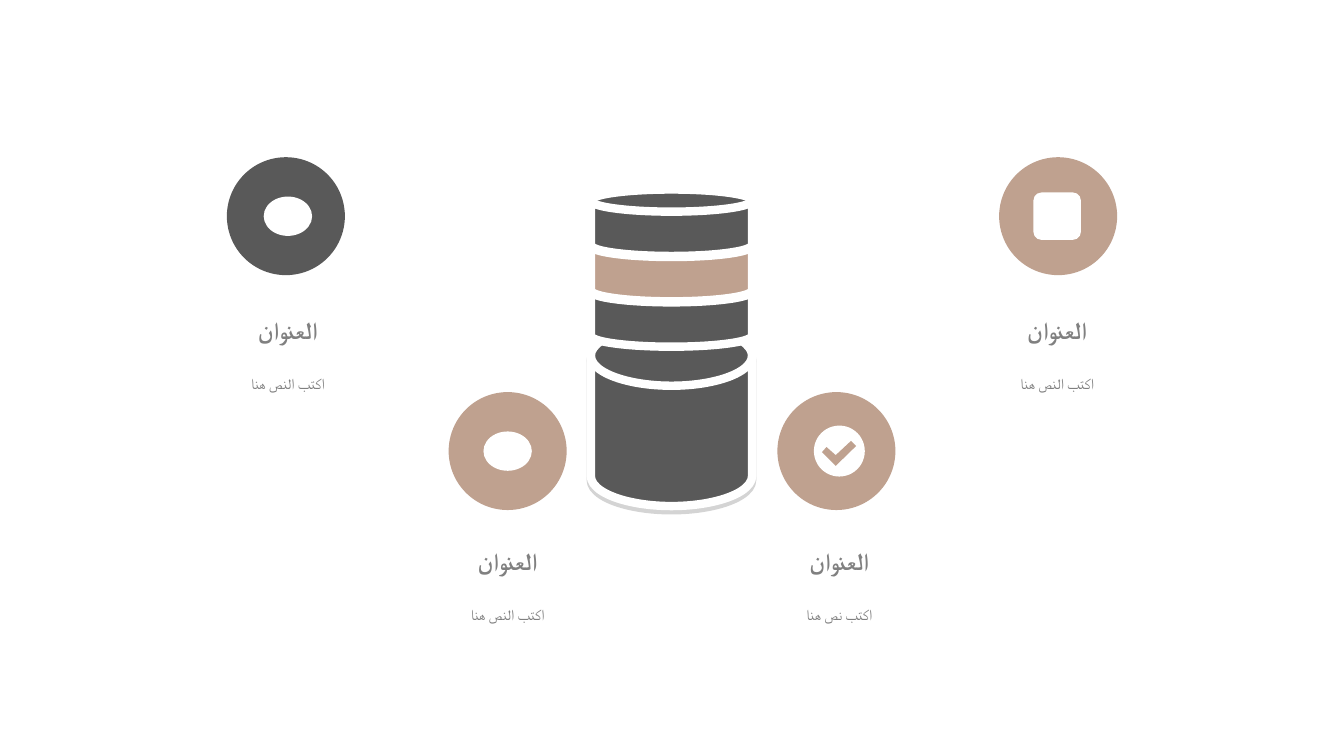
import pptx
import pptx.util
import pptx.dml.color
import pptx.enum.shapes
import pptx.enum.text
import lxml.etree

SHAPES = pptx.enum.shapes.MSO_SHAPE
ANCHOR = pptx.enum.text.MSO_ANCHOR
DML = "http://schemas.openxmlformats.org/drawingml/2006/main"
FONT = "Noto Sans CJK SC"
COLORS = {"dark": "595959", "tan": "BFA18F", "text": "808080",
          "white": "FFFFFF", "shadow": "000000"}

# The slide is a grid of 100 columns by 100 rows.
WIDTH, HEIGHT = pptx.util.Inches(13.33), pptx.util.Inches(7.5)
COL, ROW = WIDTH / 100, HEIGHT / 100
DISC = (8.78, 15.6)
LABEL_WIDTH = 20.18
TITLE_ROWS, BODY_ROWS, BODY_DROP = 3.6, 8.53, 4.45
# Corners of the tick as shares of its badge.
TICK = [(0.16, 0.52), (0.25, 0.42), (0.43, 0.58),
        (0.73, 0.3), (0.83, 0.4), (0.43, 0.79)]


def rgb(name):
    return pptx.dml.color.RGBColor.from_string(COLORS[name])


def place(left, top, width, height):
    """Turn grid columns and rows into slide lengths."""
    return [round(n) for n in (left * COL, top * ROW, width * COL, height * ROW)]


def paint(shape, fill, outline=None):
    shape.shadow.inherit = False
    shape.fill.solid()
    shape.fill.fore_color.rgb = rgb(fill)
    if outline:
        shape.line.color.rgb = rgb(outline)
        shape.line.width = pptx.util.Pt(6)
    else:
        shape.line.fill.background()
    return shape


def cast_shadow(shape):
    effects = shape.element.spPr.find(f"{{{DML}}}effectLst")
    shadow = lxml.etree.SubElement(
        effects, f"{{{DML}}}outerShdw", blurRad="0",
        dist=str(pptx.util.Pt(3)), dir="5400000", algn="t", rotWithShape="0")
    color = lxml.etree.SubElement(shadow, f"{{{DML}}}srgbClr", val=COLORS["shadow"])
    lxml.etree.SubElement(color, f"{{{DML}}}alpha", val="16000")


def draw_database(slide, left, top, width):
    """Stack three thin disks on a tall one, drawn from the bottom up."""
    step, thin, tall = 6, 8.8, 23.87
    for level, fill in reversed(list(enumerate(["dark", "tan", "dark", "dark"]))):
        is_base = level == 3
        disk = slide.shapes.add_shape(
            SHAPES.FLOWCHART_MAGNETIC_DISK,
            *place(left, top + level * step, width, tall if is_base else thin))
        paint(disk, fill, "white")
        if is_base:
            cast_shadow(disk)


def add_label(slide, box, words, size, bold, anchor, wrap, spacing):
    frame = slide.shapes.add_textbox(*place(*box)).text_frame
    frame.margin_left = frame.margin_right = pptx.util.Inches(0.1)
    frame.margin_top = frame.margin_bottom = 0
    frame.vertical_anchor = anchor
    frame.word_wrap = wrap
    paragraph = frame.paragraphs[0]
    paragraph.alignment = pptx.enum.text.PP_ALIGN.CENTER
    paragraph.line_spacing = spacing
    paragraph._p.get_or_add_pPr().set("rtl", "1")
    run = paragraph.add_run()
    run.text = words
    run.font.name = FONT
    run.font.size = pptx.util.Pt(size)
    run.font.bold = bold
    run.font.color.rgb = rgb("text")
    lxml.etree.SubElement(run.font._element, f"{{{DML}}}cs", typeface=FONT)


def draw_tick(slide, badge, fill):
    corners = [(round(badge.left + x * badge.width), round(badge.top + y * badge.height))
               for x, y in TICK]
    builder = slide.shapes.build_freeform(*corners[0], scale=1.0)
    builder.add_line_segments(corners[1:], close=True)
    paint(builder.convert_to_shape(), fill)


def draw_card(slide, left, disc_left, disc_top, title_top, fill, icon, body, ticked=False):
    """Draw a disc with its icon, and a title and text below it."""
    disc = slide.shapes.add_shape(SHAPES.OVAL, *place(disc_left, disc_top, *DISC))
    paint(disc, fill)
    icon_shape, icon_width, icon_height = icon
    badge = slide.shapes.add_shape(icon_shape, *place(
        left + (LABEL_WIDTH - icon_width) / 2,
        disc_top + (DISC[1] - icon_height) / 2, icon_width, icon_height))
    paint(badge, "white")
    if ticked:
        draw_tick(slide, badge, fill)
    add_label(slide, (left, title_top + BODY_DROP, LABEL_WIDTH, BODY_ROWS),
              body, 10.7, False, ANCHOR.MIDDLE, True, 1.2)
    add_label(slide, (left, title_top, LABEL_WIDTH, TITLE_ROWS),
              "العنوان", 17.3, True, ANCHOR.TOP, False, 1.0)


def main():
    deck = pptx.Presentation()
    deck.slide_width, deck.slide_height = WIDTH, HEIGHT
    slide = deck.slides.add_slide(deck.slide_layouts[6])
    draw_database(slide, 43.96, 25.07, 12)

    upper, lower = (20.8, 41.73), (51.87, 72.27)
    square = (SHAPES.ROUNDED_RECTANGLE, 3.53, 6.27)
    oval = (SHAPES.OVAL, 3.6, 5.2)
    badge = (SHAPES.OVAL, 3.79, 6.74)
    body = "اكتب النص هنا"
    draw_card(slide, 68.57, 74.34, *upper, "tan", square, body)
    draw_card(slide, 11.33, 16.88, *upper, "dark", oval, body)
    draw_card(slide, 27.68, 33.38, *lower, "tan", oval, body)
    draw_card(slide, 52.36, 57.84, *lower, "tan", badge, "اكتب نص هنا", ticked=True)
    deck.save("out.pptx")


if __name__ == "__main__":
    main()
